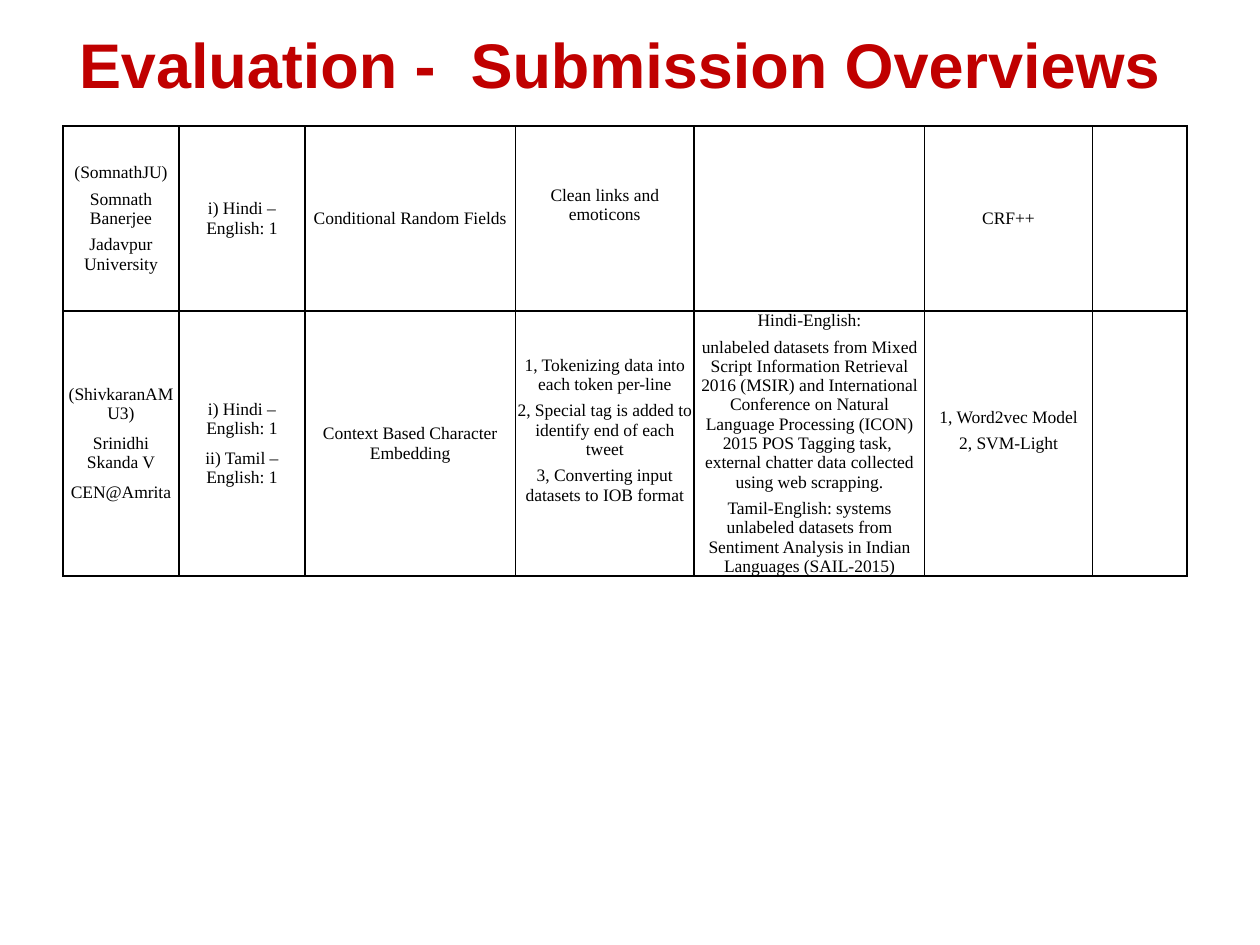
import pptx
import pptx.dml.color
import pptx.enum.text
import pptx.util
import lxml.etree
import pptx.oxml.ns

Inches = pptx.util.Inches
Pt = pptx.util.Pt
CENTER = pptx.enum.text.PP_ALIGN.CENTER
MIDDLE = pptx.enum.text.MSO_ANCHOR.MIDDLE

COLUMN_WIDTHS = [0.92, 1, 1.67, 1.42, 1.83, 1.33, 0.75]
ROW_HEIGHTS = [1.47, 2.1]
PADDED_COLUMNS = 3
RAISED_CELLS = {(0, 3), (1, 3), (1, 5)}
RAISE = 0.21
SUBMISSIONS = [
    [
        ["(SomnathJU)", "Somnath Banerjee", "Jadavpur University"],
        ["i) Hindi – English: 1"],
        ["Conditional Random Fields"],
        ["Clean links and emoticons"],
        [],
        ["CRF++"],
        [],
    ],
    [
        ["(ShivkaranAMU3)", "Srinidhi Skanda V", "CEN@Amrita"],
        ["i) Hindi – English: 1", "ii) Tamil – English: 1"],
        ["Context Based Character Embedding"],
        ["1, Tokenizing data into each token per-line",
         "2, Special tag is added to identify end of each tweet",
         "3, Converting input datasets to IOB format"],
        ["Hindi-English:",
         "unlabeled datasets from Mixed Script Information Retrieval 2016 (MSIR) "
         "and International Conference on Natural Language Processing (ICON) 2015 "
         "POS Tagging task,  external chatter data collected using web scrapping.",
         "Tamil-English: systems unlabeled datasets from Sentiment Analysis in "
         "Indian Languages (SAIL-2015)"],
        ["1, Word2vec Model", "2, SVM-Light"],
        [],
    ],
]


def color(hex_value):
    return pptx.dml.color.RGBColor.from_string(hex_value)


def format_paragraph(paragraph, font_name, size, hex_value, bold=False):
    paragraph.alignment = CENTER
    for run in paragraph.runs:
        run.font.name = font_name
        run.font.size = Pt(size)
        run.font.bold = bold
        run.font.color.rgb = color(hex_value)


def add_title(slide, left, top, width, height):
    title = slide.shapes.title
    title.left, title.top = Inches(left), Inches(top)
    title.width, title.height = Inches(width), Inches(height)
    title.text_frame.text = "Evaluation -  Submission Overviews"
    title.text_frame.vertical_anchor = MIDDLE
    title.text_frame.word_wrap = True
    format_paragraph(title.text_frame.paragraphs[0], "Arial", 36, "C00000", True)


def add_borders(cell, hex_value, width):
    properties = cell._tc.get_or_add_tcPr()
    qn = pptx.oxml.ns.qn
    for side in ("a:lnL", "a:lnR", "a:lnT", "a:lnB"):
        border = lxml.etree.SubElement(properties, qn(side), w=str(Pt(width)))
        fill = lxml.etree.SubElement(border, qn("a:solidFill"))
        lxml.etree.SubElement(fill, qn("a:srgbClr"), val=hex_value)


def fill_cell(cell, lines, padded, raised):
    add_borders(cell, "000000", 1)
    cell.fill.background()
    cell.vertical_anchor = MIDDLE
    cell.margin_left = cell.margin_right = Inches(0.02 if padded else 0)
    cell.margin_top = cell.margin_bottom = Inches(0.01 if padded else 0)
    if raised:
        cell.margin_bottom = Inches(RAISE)
    cell.text_frame.text = "\n".join(lines)
    for paragraph in cell.text_frame.paragraphs:
        format_paragraph(paragraph, "Times New Roman", 10, "000000")
        paragraph.space_after = Pt(6 if padded else 4)


def add_submissions(slide, left, top):
    table = slide.shapes.add_table(
        len(ROW_HEIGHTS), len(COLUMN_WIDTHS), Inches(left), Inches(top),
        Inches(sum(COLUMN_WIDTHS)), Inches(sum(ROW_HEIGHTS))).table
    table.first_row = table.horz_banding = False
    for column, width in zip(table.columns, COLUMN_WIDTHS):
        column.width = Inches(width)
    for r, (height, submission) in enumerate(zip(ROW_HEIGHTS, SUBMISSIONS)):
        table.rows[r].height = Inches(height)
        for c, lines in enumerate(submission):
            fill_cell(table.cell(r, c), lines, c < PADDED_COLUMNS,
                      (r, c) in RAISED_CELLS)
    for paragraph in table.cell(0, 0).text_frame.paragraphs[:2]:
        paragraph.space_after = Pt(4)


def main():
    presentation = pptx.Presentation()
    presentation.slide_width = Inches(10)
    presentation.slide_height = Inches(7.5)
    slide = presentation.slides.add_slide(presentation.slide_layouts[5])
    add_submissions(slide, 0.5, 1)
    add_title(slide, 0.42, 0.17, 9, 0.67)
    presentation.save("out.pptx")


if __name__ == "__main__":
    main()
